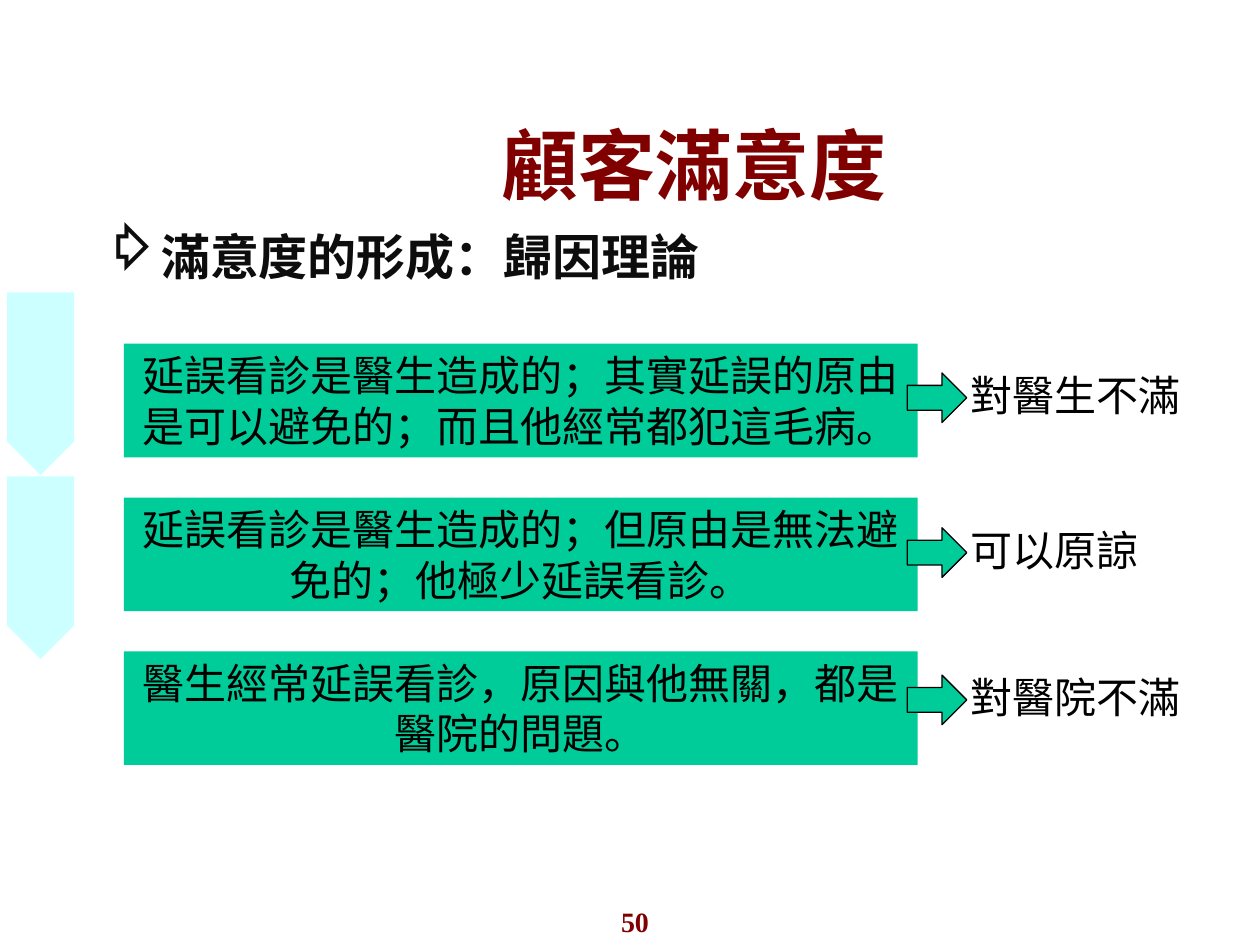
from dataclasses import dataclass

from lxml import etree
from pptx import Presentation
from pptx import util as u
from pptx.dml.color import RGBColor
from pptx.enum import shapes, text
from pptx.oxml.ns import qn


@dataclass(frozen=True)
class Theme:
    maroon: str = "800000"
    ink: str = "0D0D0D"
    black: str = "000000"
    green: str = "00CC99"
    pale: str = "CCFFFF"
    heading_font: str = "Calibri"
    body_font: str = "Times New Roman"
    title_size: int = 44
    subtitle_size: int = 28
    body_size: int = 24
    number_size: int = 16


theme = Theme()


def write(shape, words, size=theme.body_size, color=theme.black, font=theme.body_font,
          bold=False, align=text.PP_ALIGN.CENTER, anchor=text.MSO_ANCHOR.TOP,
          wrap=True, bullet=None):
    frame = shape.text_frame
    frame.word_wrap = wrap
    frame.auto_size = text.MSO_AUTO_SIZE.NONE
    frame.vertical_anchor = anchor
    para = frame.paragraphs[0]
    para.alignment = align
    if bullet:
        props = para._p.get_or_add_pPr()
        props.set("marL", str(u.Cm(0.95)))
        props.set("indent", str(-u.Cm(0.95)))
        etree.SubElement(props, qn("a:buChar"), char=bullet)
    span = para.add_run()
    span.text = words
    span.font.name = font
    span.font.size = u.Pt(size)
    span.font.bold = bold
    span.font.color.rgb = RGBColor.from_string(color)


def add_filled(page, kind, left, top, width, height, fill, line=None):
    """Add a preset shape, with lengths in centimetres and an optional thin outline."""
    shape = page.shapes.add_shape(kind, u.Cm(left), u.Cm(top), u.Cm(width), u.Cm(height))
    shape.shadow.inherit = False
    shape.fill.solid()
    shape.fill.fore_color.rgb = RGBColor.from_string(fill)
    if line:
        shape.line.color.rgb = RGBColor.from_string(line)
        shape.line.width = u.Pt(0.75)
    else:
        shape.line.fill.background()
    return shape


deck = Presentation()
deck.slide_width, deck.slide_height = u.Cm(25.4), u.Cm(19.05)
page = deck.slides.add_slide(deck.slide_layouts[5])

# Heading
title = page.shapes.title
title.left, title.top, title.width, title.height = u.Cm(4.7), u.Cm(1.7), u.Cm(18.6), u.Cm(3.18)
write(title, "顧客滿意度", size=theme.title_size, color=theme.maroon,
      font=theme.heading_font, bold=True, anchor=text.MSO_ANCHOR.MIDDLE)

subtitle = page.shapes.add_textbox(u.Cm(1.85), u.Cm(4.45), u.Cm(22.86), u.Cm(4.32))
write(subtitle, "滿意度的形成：歸因理論", size=theme.subtitle_size, color=theme.ink,
      font=theme.heading_font, bold=True, align=text.PP_ALIGN.LEFT, bullet="⇨")

# Each attribution, the reaction it leads to, and the top of its arrow
attributions = [
    ("延誤看診是醫生造成的；其實延誤的原由是可以避免的；而且他經常都犯這毛病。", "對醫生不滿", 7.52),
    ("延誤看診是醫生造成的；但原由是無法避免的；他極少延誤看診。", "可以原諒", 10.64),
    ("醫生經常延誤看診，原因與他無關，都是醫院的問題。", "對醫院不滿", 13.61),
]
for row, (cause, reaction, arrow_top) in enumerate(attributions):
    box = add_filled(page, shapes.MSO_SHAPE.RECTANGLE, 2.5, 6.93 + 3.1 * row, 16, 2.29,
                     theme.green)
    write(box, cause)
    add_filled(page, shapes.MSO_SHAPE.RIGHT_ARROW, 18.29, arrow_top, 1.2, 1,
               theme.green, line=theme.black)
    label = page.shapes.add_textbox(u.Cm(19.3), u.Cm(arrow_top - 0.2),
                                    u.Cm(0.5 + 0.85 * len(reaction)), u.Cm(1.27))
    write(label, reaction, wrap=False)

# Downward markers at the left edge
for top in (7.06, 10.77):
    marker = add_filled(page, shapes.MSO_SHAPE.PENTAGON, -1.02, top, 3.68, 1.35, theme.pale)
    marker.rotation = 90

number = page.shapes.add_textbox(u.Cm(12.27), u.Cm(18.11), u.Cm(2.1), u.Cm(0.94))
write(number, "50", size=theme.number_size, color=theme.maroon, bold=True,
      align=text.PP_ALIGN.LEFT)

deck.save("out.pptx")
